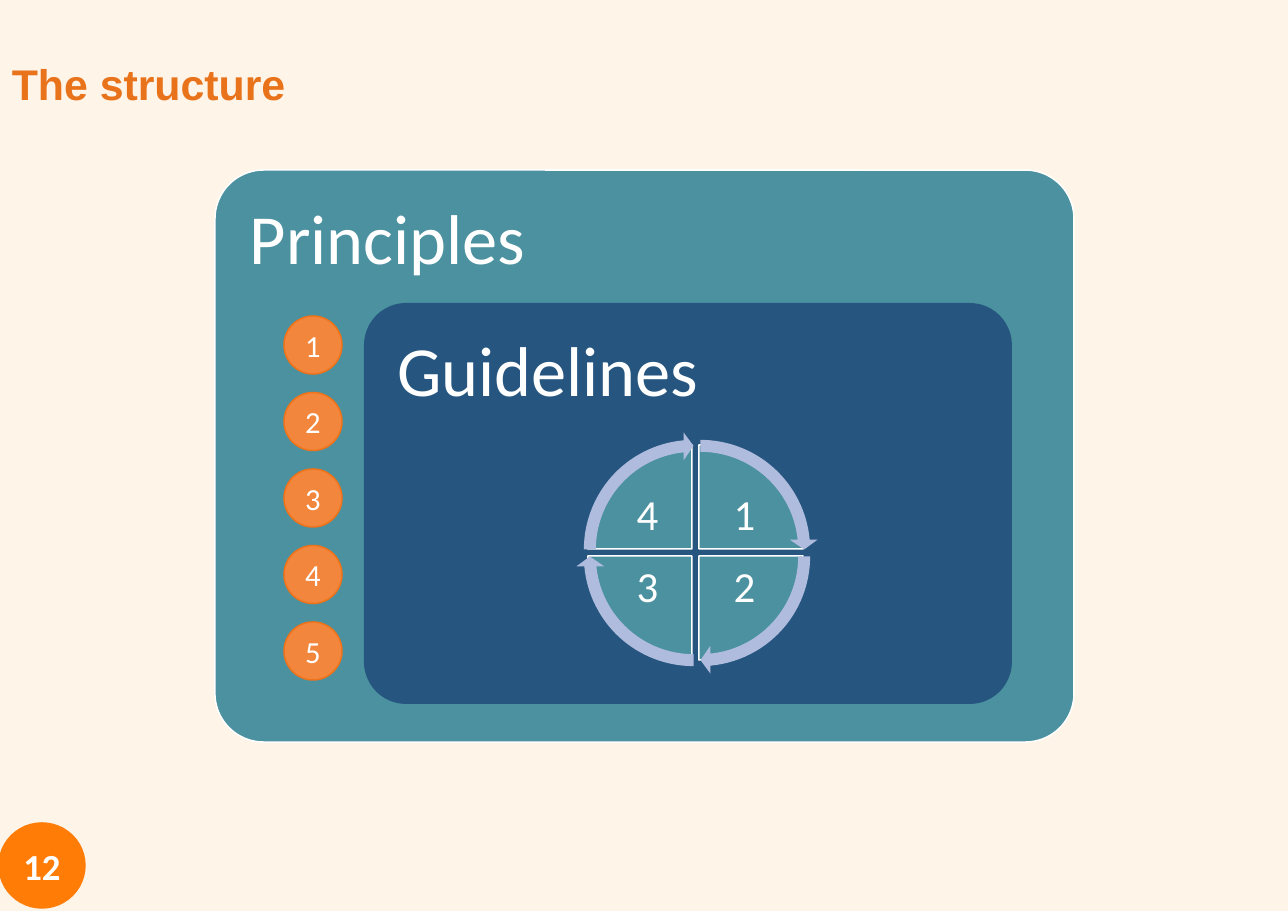
from pptx import Presentation
from pptx.dml.color import RGBColor
from pptx.enum.shapes import MSO_SHAPE as Shape
from pptx.enum.text import MSO_ANCHOR as Anchor, PP_ALIGN as Align
from pptx.util import Pt

# Content: lengths in px
PX = 8298  # EMU per px
PAGE_SIZE = (1288, 911)

CREAM = RGBColor(0xFE, 0xF4, 0xE8)
WHITE = RGBColor(0xFF, 0xFF, 0xFF)
TEAL = RGBColor(0x4B, 0x91, 0x9F)
NAVY = RGBColor(0x26, 0x56, 0x7F)
LILAC = RGBColor(0xB0, 0xBC, 0xDE)
TITLE_ORANGE = RGBColor(0xE8, 0x73, 0x1B)
PALE_ORANGE = RGBColor(0xF2, 0x86, 0x3C)
EDGE_ORANGE = RGBColor(0xEF, 0x73, 0x1B)
BRIGHT_ORANGE = RGBColor(0xFF, 0x7C, 0x07)

TITLE = "The structure"
PAGE_NUMBER = "12"
FRAMES = [  # label, frame, label box, corner, fill, line
    ("Principles", (215, 170, 859, 572), (229, 183, 831, 544), 0.085, TEAL, WHITE),
    ("Guidelines", (364, 303, 648, 401), (376, 315, 624, 376), 0.105, NAVY, None),
]
PRINCIPLES = ["1", "2", "3", "4", "5"]
GUIDELINES = [  # label, column, row, start angle; clockwise from upper right
    ("1", 1, 0, 162), ("2", 1, 1, 0), ("3", 0, 1, 54), ("4", 0, 0, 108),
]

# Wheel geometry; angles are in units of 5/3 degree, so a full turn is 216
WHEEL_LEFT, WHEEL_TOP, WHEEL_SIZE, WHEEL_GAP = 588, 445, 208, 7
ARROW_SIZE, ARROW_LEFT, ARROW_TOP = 235, 576, 432
QUARTER, TURN, ARROW_HEAD = 54, 216, 3.275
BALL_LEFT, BALL_TOP, BALL_SIZE, BALL_SPAN = 284, 316, 58, 306

deck = Presentation()
deck.slide_width, deck.slide_height = (side * PX for side in PAGE_SIZE)
page = deck.slides.add_slide(deck.slide_layouts[6])
page.background.fill.solid()
page.background.fill.fore_color.rgb = CREAM


def emu(box):
    return [round(length * PX) for length in box]


def add_part(kind, box, fill, line=None, adjust=()):
    part = page.shapes.add_shape(kind, *emu(box))
    part.shadow.inherit = False
    part.fill.solid()
    part.fill.fore_color.rgb = fill
    if line is None:
        part.line.fill.background()
    else:
        part.line.color.rgb = line
        part.line.width = Pt(1)
    for index, value in enumerate(adjust):
        part.adjustments[index] = value
    return part


def write(part, text, size, inset=None, anchor=Anchor.MIDDLE, align=Align.CENTER,
          spacing=0.9, wrap=True, **font):
    frame = part.text_frame
    frame.word_wrap = wrap
    frame.vertical_anchor = anchor
    if inset is not None:
        for side in ("left", "top", "right", "bottom"):
            setattr(frame, f"margin_{side}", inset * PX)
    para = frame.paragraphs[0]
    para.alignment, para.line_spacing = align, spacing
    span = para.add_run()
    span.text = text
    looks = {"name": "Calibri", "bold": False, "size": Pt(size)} | font
    color = looks.pop("color", WHITE)
    for name, value in looks.items():
        setattr(span.font, name, value)
    span.font.color.rgb = color


def add_text(box, text, size, **options):
    write(page.shapes.add_textbox(*emu(box)), text, size, **options)


# Nested frames
for label, box, label_box, corner, fill, line in FRAMES:
    add_part(Shape.ROUNDED_RECTANGLE, box, fill, line, [corner])
    add_text(label_box, label, 46, inset=21, anchor=Anchor.TOP, align=Align.LEFT)

# Title
add_text((1, 53, 426, 67), TITLE, 28, align=Align.LEFT,
         name="Arial", bold=True, color=TITLE_ORANGE)

# Column of principles
pitch = BALL_SPAN / (len(PRINCIPLES) - 1)
for index, label in enumerate(PRINCIPLES):
    box = (BALL_LEFT, BALL_TOP + index * pitch, BALL_SIZE, BALL_SIZE)
    ball = add_part(Shape.OVAL, box, PALE_ORANGE, EDGE_ORANGE)
    write(ball, label, 20, spacing=1, wrap=False)

# Wheel of guidelines
for label, column, row, start in GUIDELINES:
    right, down = column * WHEEL_GAP, row * WHEEL_GAP
    add_part(Shape.PIE, (WHEEL_LEFT + right, WHEEL_TOP + down, WHEEL_SIZE, WHEEL_SIZE),
             TEAL, WHITE, [start, (start + QUARTER) % TURN])
    add_text((609 + 97 * column, 488 + 72 * row, 77, 57), label, 28, inset=4)

# Arrows around the wheel
for label, column, row, start in GUIDELINES:
    right, down = column * WHEEL_GAP, row * WHEEL_GAP
    add_part(Shape.CIRCULAR_ARROW,
             (ARROW_LEFT + right, ARROW_TOP + down, ARROW_SIZE, ARROW_SIZE), LILAC,
             adjust=[0.051, ARROW_HEAD, start + QUARTER - ARROW_HEAD, start, 0.059])

# Page number
badge = add_part(Shape.OVAL, (-1, 823, 86, 85), BRIGHT_ORANGE, BRIGHT_ORANGE)
write(badge, PAGE_NUMBER, 24, spacing=1, wrap=False, bold=True)

deck.save("out.pptx")
